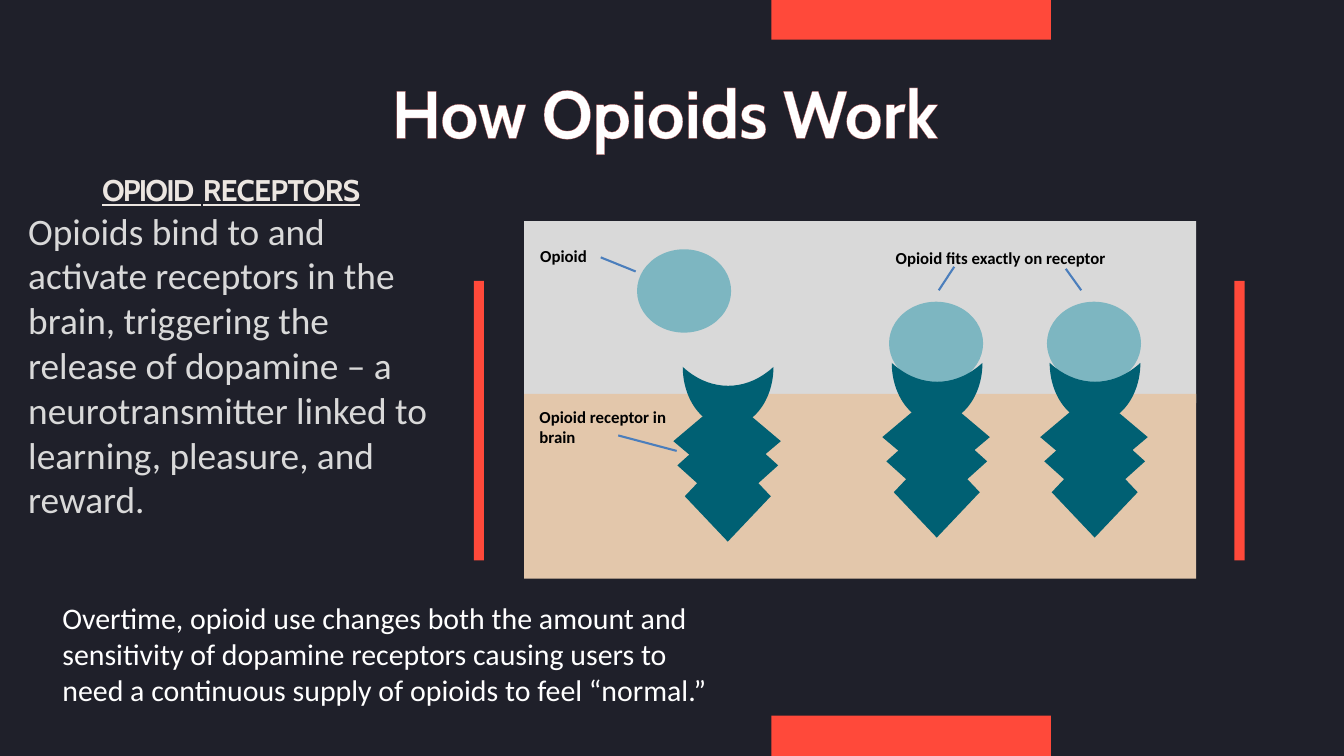
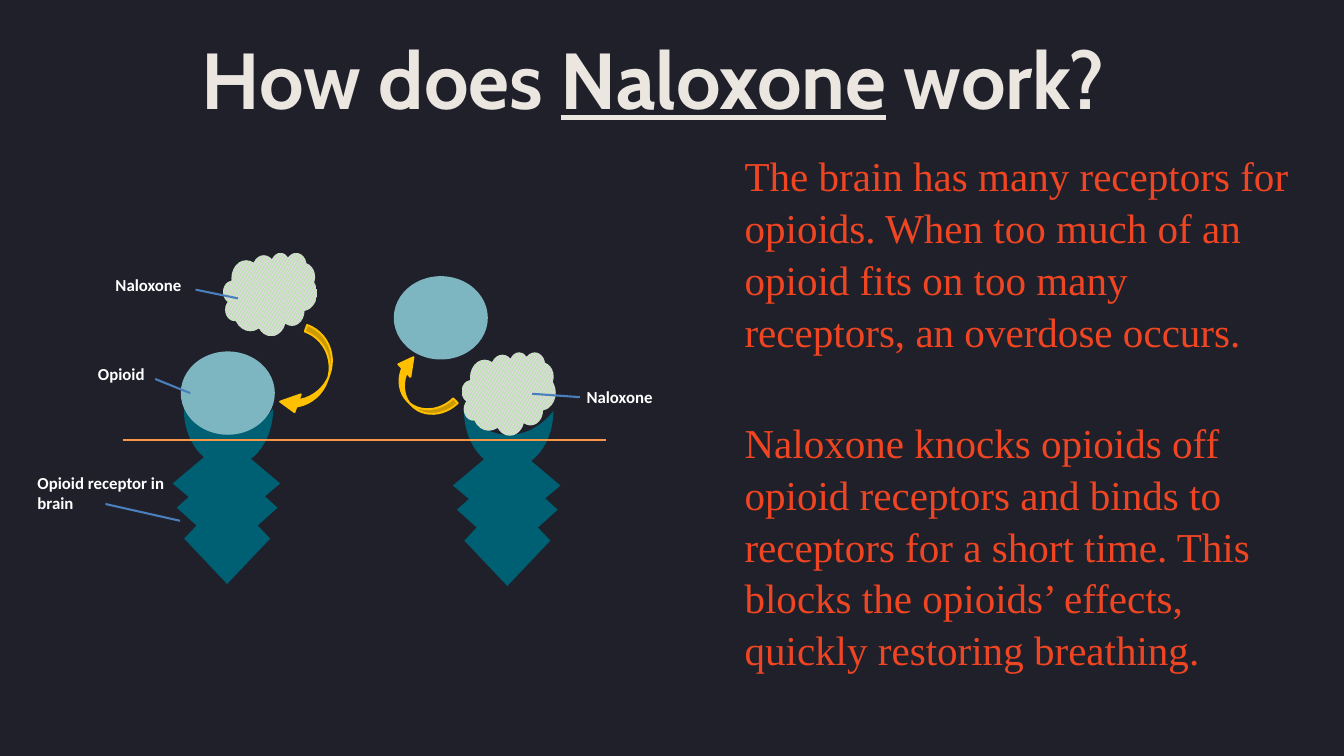
import pptx
import pptx.util
import pptx.dml.color
import pptx.enum.dml
import pptx.enum.shapes
import pptx.enum.text
import lxml.etree
from pptx.util import Inches

RGBColor = pptx.dml.color.RGBColor
SHAPE = pptx.enum.shapes.MSO_SHAPE
ALIGN = pptx.enum.text.PP_ALIGN

NIGHT = RGBColor(0x1F, 0x20, 0x2A)
WHITE = RGBColor(0xFF, 0xFF, 0xFF)
BLACK = RGBColor(0x00, 0x00, 0x00)
CREAM = RGBColor(0xEC, 0xE6, 0xE1)
GREY = RGBColor(0xD9, 0xD9, 0xD9)
CORAL = RGBColor(0xFF, 0x49, 0x3A)
VERMILION = RGBColor(0xEF, 0x45, 0x22)
SAND = RGBColor(0xE3, 0xC7, 0xAB)
OPIOID_BLUE = RGBColor(0x7D, 0xB6, 0xC1)
RECEPTOR_TEAL = RGBColor(0x00, 0x60, 0x73)
POINTER_BLUE = RGBColor(0x4B, 0x7E, 0xBC)
CLOUD_GREEN = RGBColor(0x66, 0xFF, 0x33)
GOLD = RGBColor(0xFF, 0xC0, 0x00)
ORANGE = RGBColor(0xF7, 0x96, 0x46)
TITLE_FONT = "Cabin"
BODY_FONT = "Calibri"


def add_text(page, place, paragraphs, size, color, font=BODY_FONT,
             bold=False, align=None, inset=True):
    """Each paragraph is a list of run texts; returns the paragraphs."""
    box = page.shapes.add_textbox(*map(Inches, place))
    frame = box.text_frame
    frame.word_wrap = True
    if not inset:
        frame.margin_left = frame.margin_right = 0
        frame.margin_top = frame.margin_bottom = 0
    for number, texts in enumerate(paragraphs):
        para = frame.add_paragraph() if number else frame.paragraphs[0]
        for text in texts:
            para.add_run().text = text
        para.alignment = align
        para.font.size = pptx.util.Pt(size)
        para.font.name = font
        para.font.bold = bold
        para.font.color.rgb = color
    return frame.paragraphs


def add_shape(parent, kind, place, color, rotation=0, adjustments=()):
    shape = parent.shapes.add_shape(kind, *map(Inches, place))
    shape.shadow.inherit = False
    shape.fill.solid()
    shape.fill.fore_color.rgb = color
    shape.line.fill.background()
    shape.rotation = rotation
    for number, value in enumerate(adjustments):
        shape.adjustments[number] = value
    return shape


deck = pptx.Presentation()
deck.slide_width = Inches(20)
deck.slide_height = Inches(11.25)
pages = []
for _ in range(2):
    page = deck.slides.add_slide(deck.slide_layouts[6])
    page.background.fill.solid()
    page.background.fill.fore_color.rgb = NIGHT
    pages.append(page)
opioid_page, naloxone_page = pages

# Titles
title = add_text(opioid_page, (1.81, 1.06, 16.17, 1.23), [["How Opioids Work"]],
                 72, WHITE, TITLE_FONT, True, ALIGN.CENTER, False)[0]
outline = lxml.etree.fromstring(
    '<a:ln xmlns:a="http://schemas.openxmlformats.org/drawingml/2006/main" w="6600">'
    '<a:solidFill><a:srgbClr val="C0504D"/></a:solidFill></a:ln>')
title.runs[0].font._element.insert(0, outline)

title = add_text(naloxone_page, (1.23, 0.45, 16.98, 1.43),
                 [["How does ", "Naloxone", " work?"]],
                 85, CREAM, TITLE_FONT, True, ALIGN.CENTER, False)[0]
title.runs[1].font.underline = True

# Coral bars around the first slide
for place in [(11.48, 0, 4.16, 0.59), (11.48, 10.65, 4.16, 0.6),
              (7.05, 4.18, 0.15, 4.16), (18.37, 4.18, 0.15, 4.16)]:
    add_shape(opioid_page, SHAPE.RECTANGLE, place, CORAL)

# Text of the first slide
heading, body = add_text(
    opioid_page, (0.42, 2.56, 6.04, 5.92),
    [["OPIOID", " ", "RECEPTORS"],
     ["Opioids bind to and activate receptors in the brain, triggering the "
      "release of dopamine – a neurotransmitter linked to learning, pleasure, "
      "and reward."]],
    40, GREY, inset=False)
heading.alignment = ALIGN.CENTER
heading.font.size = pptx.util.Pt(32)
heading.font.name = TITLE_FONT
heading.font.bold = True
heading.font.underline = True
heading.font.color.rgb = CREAM
for span, spacing in zip(heading.runs, (-200, 180, -80)):
    span.font._element.set("spc", str(spacing))

add_text(opioid_page, (0.83, 8.88, 10, 2.02),
         [["Overtime, opioid use changes both the amount and sensitivity of "
           "dopamine receptors causing users to need a continuous supply of "
           "opioids to feel “normal.”"]], 32, WHITE)

# Text of the second slide
overdose, rescue = add_text(
    naloxone_page, (11.08, 2.21, 8.22, 8.13),
    [["The brain has many receptors for opioids. When too much of an opioid "
      "fits on too many receptors, an overdose occurs."],
     ["Naloxone knocks opioids off opioid receptors and binds to receptors for "
      "a short time. This blocks the opioids’ effects, quickly restoring "
      "breathing."]],
    44, VERMILION, "Times New Roman", inset=False)
overdose.space_after = pptx.util.Pt(64)
for para in (overdose, rescue):
    para.line_spacing = 1.05

# Panel with the brain below the receptors' surface
add_shape(opioid_page, SHAPE.RECTANGLE, (7.8, 3.29, 10, 2.71), GREY)
add_shape(opioid_page, SHAPE.RECTANGLE, (7.8, 5.86, 10, 2.75), SAND)

# Opioids on the first slide
for left, top in [(9.48, 3.71), (13.23, 4.49), (15.58, 4.49)]:
    add_shape(opioid_page, SHAPE.OVAL, (left, top, 1.4, 1.24), OPIOID_BLUE)

# Receptors: three stacked diamonds under a cup
opioid_cup = (0.37, -0.66, 0.89, 1.35, 0.684)
naloxone_cup = (0.4, -0.67, 0.86, 1.33, 0.587)
for page, left, top, cup in [(opioid_page, 10.02, 5.89, opioid_cup),
                             (opioid_page, 13.13, 5.83, opioid_cup),
                             (opioid_page, 15.48, 5.83, opioid_cup),
                             (naloxone_page, 2.57, 6.52, naloxone_cup),
                             (naloxone_page, 6.74, 6.55, naloxone_cup)]:
    receptor = page.shapes.add_group_shape()
    for right_by, down_by, width in [(0, 0, 1.6), (0.17, 0.82, 1.28), (0.06, 0.36, 1.5)]:
        add_shape(receptor, SHAPE.DIAMOND,
                  (left + right_by, top + down_by, width, 1.35), RECEPTOR_TEAL)
    right_by, down_by, width, height, depth = cup
    add_shape(receptor, SHAPE.MOON, (left + right_by, top + down_by, width, height),
              RECEPTOR_TEAL, 270, [depth])

# Opioids, naloxone clouds and arrows on the second slide
for left, top in [(2.69, 5.23), (5.86, 4.11)]:
    add_shape(naloxone_page, SHAPE.OVAL, (left, top, 1.4, 1.24), OPIOID_BLUE)
for left, top in [(3.32, 3.76), (6.87, 5.24)]:
    cloud = add_shape(naloxone_page, SHAPE.CLOUD, (left, top, 1.4, 1.24), GREY)
    cloud.fill.patterned()
    cloud.fill.pattern = pptx.enum.dml.MSO_PATTERN.LARGE_CONFETTI
    cloud.fill.fore_color.rgb = CLOUD_GREEN
    cloud.fill.back_color.rgb = GREY
for place, rotation in [((4.33, 4.89, 0.56, 1.35), 19.4),
                        ((5.99, 5.25, 0.52, 1.08), 136)]:
    arrow = add_shape(naloxone_page, SHAPE.CURVED_LEFT_ARROW, place, GOLD,
                      rotation, [0.186, 0.502, 0.455])
    arrow.line.color.rgb = GOLD
    arrow.line.width = pptx.util.Pt(2)

# Labels
for page, color, labels in [
        (opioid_page, BLACK, [("Opioid", 7.94, 3.6, 1.11, 0.4),
                              ("Opioid fits exactly on receptor", 13.23, 3.64, 3.95, 0.4),
                              ("Opioid receptor in brain", 7.93, 6, 2.23, 0.71)]),
        (naloxone_page, WHITE, [("Opioid", 1.36, 5.36, 1.11, 0.4),
                                ("Naloxone", 8.63, 5.71, 1.41, 0.4),
                                ("Naloxone", 1.62, 4.04, 1.41, 0.4),
                                ("Opioid receptor in brain", 0.46, 6.98, 2.23, 0.71)])]:
    for text, *place in labels:
        add_text(page, place, [[text]], 18, color, bold=True)

# Label pointers and the surface line
pointers = [(opioid_page, 9.2, 6.48, 10.07, 6.71), (opioid_page, 8.94, 3.83, 9.46, 4.04),
            (opioid_page, 14.2, 3.97, 13.97, 4.32), (opioid_page, 15.86, 4, 16.09, 4.32),
            (naloxone_page, 1.57, 7.5, 2.68, 7.75), (naloxone_page, 2.31, 5.64, 2.83, 5.85),
            (naloxone_page, 2.91, 4.31, 3.54, 4.44), (naloxone_page, 8.63, 5.91, 7.92, 5.86)]
lines = [(*pointer, POINTER_BLUE, 2.25) for pointer in pointers]
lines.append((naloxone_page, 1.83, 6.55, 9.02, 6.55, ORANGE, 2))
for page, *ends, color, weight in lines:
    line = page.shapes.add_connector(pptx.enum.shapes.MSO_CONNECTOR.STRAIGHT,
                                     *map(Inches, ends))
    line.line.color.rgb = color
    line.line.width = pptx.util.Pt(weight)
    lxml.etree.SubElement(line._element.spPr, pptx.oxml.ns.qn("a:effectLst"))

deck.save("out.pptx")
